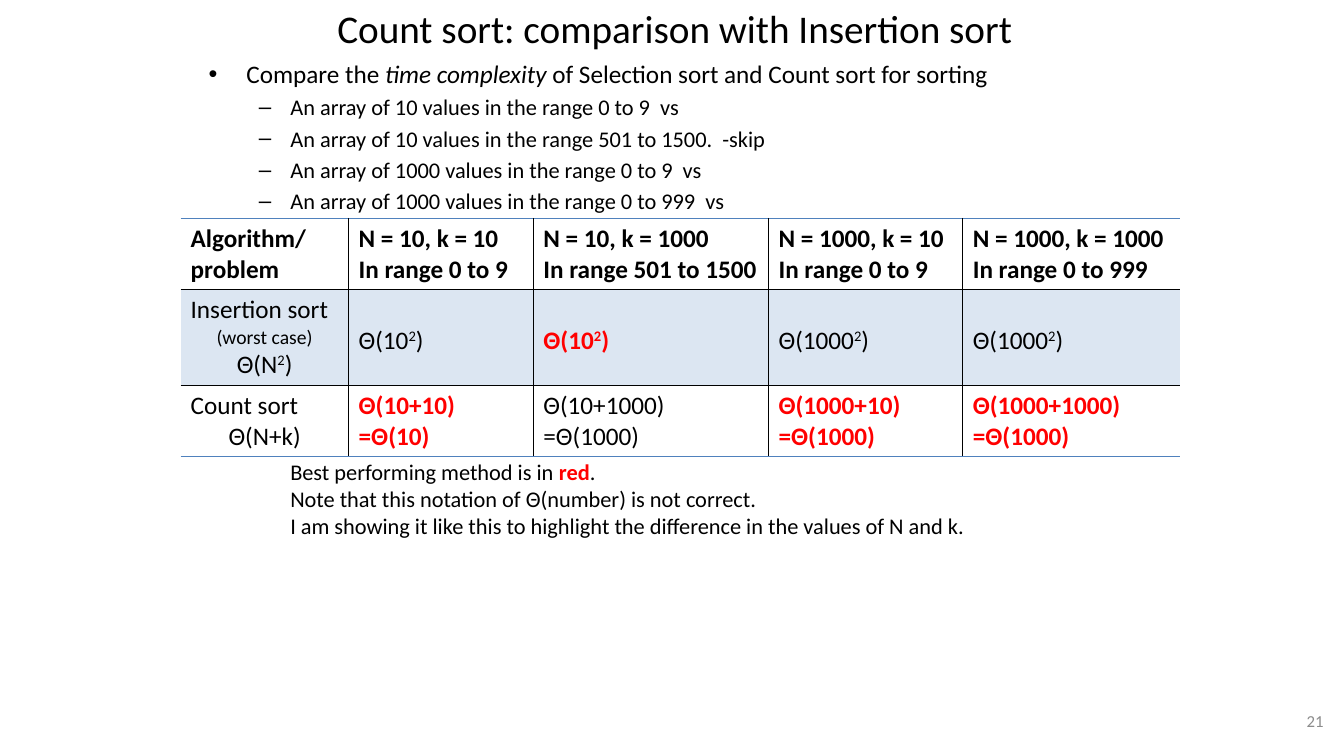
from lxml import etree
from pptx import Presentation
from pptx import util as u
from pptx.dml import color as c
from pptx.enum import text as t
from pptx.oxml import ns
from dataclasses import dataclass


@dataclass(frozen=True)
class Theme:
    font: str = "Calibri"
    black: str = "000000"
    red: str = "FF0000"
    gray: str = "8C8C8C"
    blue: str = "4F81BD"
    pale_blue: str = "DCE6F2"
    title: int = 28
    main: int = 18
    detail: int = 16
    caption: int = 14
    number: int = 12


theme = Theme()
PX = 9525


def write(paragraph, content, size=theme.main, color=theme.black, bold=False, italic=False):
    for index, piece in enumerate(content.split("^")):
        if not piece:
            continue
        run = paragraph.add_run()
        run.text = piece
        run.font.name = theme.font
        run.font.size = u.Pt(size)
        run.font.bold = bold
        run.font.italic = italic
        run.font.color.rgb = c.RGBColor.from_string(color)
        if index % 2:
            run.font._element.set("baseline", "30000")


def add_border(properties, position, side, color):
    line = etree.Element(ns.qn(f"a:ln{side}"), w=str(u.Pt(1)))
    if color:
        fill = etree.SubElement(line, ns.qn("a:solidFill"))
        etree.SubElement(fill, ns.qn("a:srgbClr"), val=color)
    else:
        etree.SubElement(line, ns.qn("a:noFill"))
    properties.insert(position, line)


presentation = Presentation()
presentation.slide_width = 1280 * PX
presentation.slide_height = 720 * PX
slide = presentation.slides.add_slide(presentation.slide_layouts[1])

title, body = slide.placeholders
for placeholder, box in ((title, (172, 0, 941, 53)), (body, (189, 51, 864, 182))):
    placeholder.left, placeholder.top, placeholder.width, placeholder.height = [n * PX for n in box]
    placeholder.text_frame.auto_size = t.MSO_AUTO_SIZE.NONE
write(title.text_frame.paragraphs[0], "Count sort: comparison with Insertion sort", size=theme.title)

lead = body.text_frame.paragraphs[0]
write(lead, "Compare the ")
write(lead, "time complexity ", italic=True)
write(lead, "of Selection sort and Count sort for sorting")
for example in (
    "An array of 10 values in the range 0 to 9  vs",
    "An array of 10 values in the range 501 to 1500.  -skip",
    "An array of 1000 values in the range 0 to 9  vs",
    "An array of 1000 values in the range 0 to 999  vs",
):
    paragraph = body.text_frame.add_paragraph()
    paragraph.level = 1
    write(paragraph, example, size=theme.detail)

number = slide.shapes.add_textbox(971 * PX, 667 * PX, 299 * PX, 38 * PX).text_frame
number.word_wrap = True
number.vertical_anchor = t.MSO_ANCHOR.MIDDLE
number.paragraphs[0].alignment = t.PP_ALIGN.RIGHT
write(number.paragraphs[0], "21", size=theme.number, color=theme.gray)

columns = (160, 176, 224, 185, 207)
heights = (68, 91, 68)
rows = (
    (
        ("Algorithm/ problem",),
        ("N = 10, k = 10", "In range 0 to 9"),
        ("N = 10, k = 1000", "In range 501 to 1500"),
        ("N = 1000, k = 10", "In range 0 to 9"),
        ("N = 1000, k = 1000", "In range 0 to 999"),
    ),
    (
        ("Insertion sort", "Θ(N^2^)"),
        ("Θ(10^2^)",),
        ("Θ(10^2^)",),
        ("Θ(1000^2^)",),
        ("Θ(1000^2^)",),
    ),
    (
        ("Count sort", "Θ(N+k)"),
        ("Θ(10+10)", "=Θ(10)"),
        ("Θ(10+1000)", "=Θ(1000)"),
        ("Θ(1000+10)", "=Θ(1000)"),
        ("Θ(1000+1000)", "=Θ(1000)"),
    ),
)
best = {(1, 2), (2, 1), (2, 3), (2, 4)}
last_row, last_column = len(rows) - 1, len(columns) - 1

table = slide.shapes.add_table(
    len(rows), len(columns), 172 * PX, 208 * PX, sum(columns) * PX, sum(heights) * PX
).table
table.first_row = False
table.horz_banding = False
for column, width in zip(table.columns, columns):
    column.width = width * PX
for row, height in zip(table.rows, heights):
    row.height = height * PX

for row_index, row in enumerate(rows):
    for column_index, lines in enumerate(row):
        cell = table.cell(row_index, column_index)
        winner = (row_index, column_index) in best
        for line_index, line in enumerate(lines):
            frame = cell.text_frame
            paragraph = frame.add_paragraph() if line_index else frame.paragraphs[0]
            if column_index == 0 and line_index:
                paragraph.alignment = t.PP_ALIGN.CENTER
                if row_index == 1:
                    write(paragraph, "(worst case) ", size=theme.caption)
            write(
                paragraph,
                line,
                color=theme.red if winner else theme.black,
                bold=winner or row_index == 0,
            )
        if row_index == 1 and column_index:
            cell.margin_top = 34 * PX
        borders = {
            "L": theme.black if column_index else None,
            "R": theme.black if column_index < last_column else None,
            "T": theme.black if row_index else theme.blue,
            "B": theme.black if row_index < last_row else theme.blue,
        }
        properties = cell._tc.get_or_add_tcPr()
        for position, (side, color) in enumerate(borders.items()):
            add_border(properties, position, side, color)
        if row_index == 1:
            cell.fill.solid()
            cell.fill.fore_color.rgb = c.RGBColor.from_string(theme.pale_blue)
        else:
            cell.fill.background()

note = slide.shapes.add_textbox(267 * PX, 432 * PX, 669 * PX, 87 * PX).text_frame
note.word_wrap = False
note.auto_size = t.MSO_AUTO_SIZE.SHAPE_TO_FIT_TEXT
write(note.paragraphs[0], "Best performing method is in ", size=theme.detail)
write(note.paragraphs[0], "red", size=theme.detail, color=theme.red, bold=True)
write(note.paragraphs[0], ".", size=theme.detail)
for remark in (
    "Note that this notation of Θ(number) is not correct.",
    "I am showing it like this to highlight the difference in the values of N and k.",
):
    write(note.add_paragraph(), remark, size=theme.detail)

presentation.save("out.pptx")
